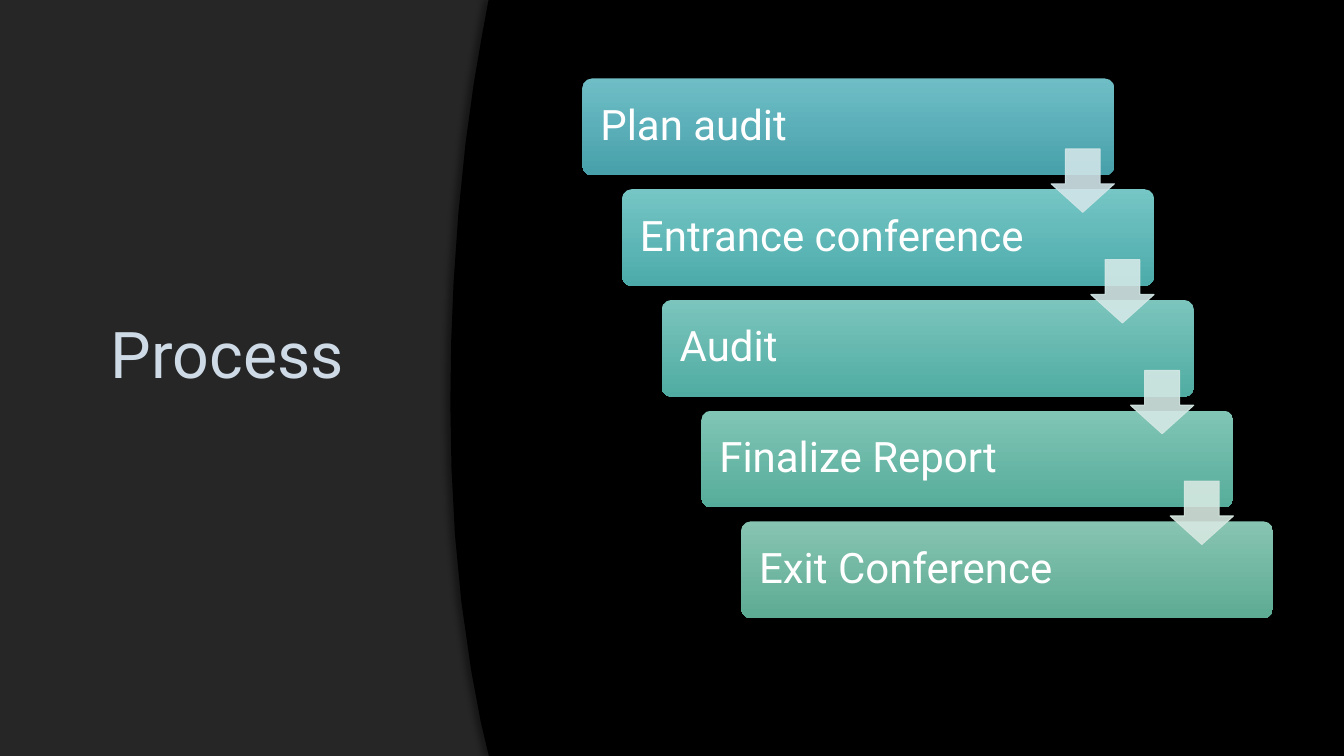
from lxml.etree import SubElement as Sub
from pptx import Presentation
from pptx.dml.color import RGBColor
from pptx.enum.shapes import MSO_SHAPE as Kind
from pptx.enum.text import MSO_ANCHOR as Anchor, PP_ALIGN as Align
from pptx.oxml.ns import qn
from pptx.util import Pt

BLACK = RGBColor(0, 0, 0)
WHITE = RGBColor(255, 255, 255)
PANEL = RGBColor(0x26, 0x26, 0x26)
EDGE = RGBColor(0x40, 0x40, 0x40)
TITLE = RGBColor(0xCE, 0xDB, 0xE6)

# Label, top colour, bottom colour of each step
STEPS = [
    ("Plan audit", RGBColor(0x6F, 0xBE, 0xC6), RGBColor(0x47, 0xA0, 0xAA)),
    ("Entrance conference", RGBColor(0x75, 0xC6, 0xC5), RGBColor(0x4C, 0xAB, 0xAA)),
    ("Audit", RGBColor(0x7B, 0xC5, 0xBD), RGBColor(0x50, 0xAC, 0xA2)),
    ("Finalize Report", RGBColor(0x81, 0xC5, 0xB6), RGBColor(0x56, 0xAC, 0x9A)),
    ("Exit Conference", RGBColor(0x87, 0xC4, 0xB1), RGBColor(0x5D, 0xAB, 0x93)),
]
ARROWS = [
    RGBColor(0xD1, 0xE5, 0xE8), RGBColor(0xD3, 0xE8, 0xE7),
    RGBColor(0xD4, 0xE8, 0xE4), RGBColor(0xD6, 0xE8, 0xE1),
]
CURVE = [
    (349, 0), (344, 27), (338.4, 60), (332.6, 102), (327.4, 153),
    (324, 202), (322.3, 244), (321.7, 288), (322.5, 334), (325, 382),
    (329.6, 430), (336.6, 479), (343.5, 516), (349.2, 540),
]


def tint(node, color, alpha):
    """Add a colour with its opacity in percent."""
    item = Sub(node, qn("a:srgbClr"), val=str(color))
    Sub(item, qn("a:alpha"), val=str(alpha * 1000))


def shade(node, alpha, blur, dist, angle):
    """Add a black outer shadow to an effect list."""
    drop = Sub(node, qn("a:outerShdw"), blurRad=str(Pt(blur)),
               dist=str(Pt(dist)), dir=str(angle * 60000), rotWithShape="0")
    tint(drop, BLACK, alpha)


def write(shape, text, font="Roboto", size=30, color=WHITE, inset=7.2):
    """Put one left-aligned, vertically centred line in a shape."""
    frame = shape.text_frame
    frame.word_wrap = True
    frame.vertical_anchor = Anchor.MIDDLE
    frame.margin_left = frame.margin_right = Pt(inset)
    line = frame.paragraphs[0]
    line.alignment = Align.LEFT
    line.line_spacing = 0.9
    run = line.add_run()
    run.text = text
    run.font.name, run.font.size = font, Pt(size)
    run.font.color.rgb = color
    return run


class Deck:
    def __init__(self, wide, high):
        self.file = Presentation()
        self.file.slide_width, self.file.slide_height = Pt(wide), Pt(high)
        self.slide = self.file.slides.add_slide(self.file.slide_layouts[5])
        self.shapes = self.slide.shapes
        back = self.slide.background.fill
        back.solid()
        back.fore_color.rgb = BLACK

    def shape(self, kind, left, top, wide, high, color=None):
        item = self.shapes.add_shape(kind, Pt(left), Pt(top), Pt(wide), Pt(high))
        item.shadow.inherit = False
        item.line.fill.background()
        if color is not None:
            item.fill.solid()
            item.fill.fore_color.rgb = color
        return item

    def title(self, text, left, top, wide, high):
        item = self.shapes.title
        self.shapes._spTree.append(item._element)  # above the panel
        item.left, item.top = Pt(left), Pt(top)
        item.width, item.height = Pt(wide), Pt(high)
        run = write(item, text, size=46, color=TITLE)
        # Faint outline and soft shadow on the letters
        props = run._r.get_or_add_rPr()
        line = props.makeelement(qn("a:ln"), {"w": str(Pt(0.75))})
        tint(Sub(line, qn("a:solidFill")), EDGE, 10)
        props.insert(0, line)
        glow = props.makeelement(qn("a:effectLst"), {})
        shade(glow, 60, 2, 1.5, 90)
        props.insert(2, glow)

    def curve(self, points, wide, high):
        form = self.shapes.build_freeform(Pt(wide), 0, scale=1.0)
        edge = [(Pt(x), Pt(y)) for x, y in points]
        form.add_line_segments(edge + [(Pt(wide), Pt(high))], close=True)
        item = form.convert_to_shape()
        item.fill.solid()
        item.fill.fore_color.rgb = BLACK
        item.line.fill.background()
        item.shadow.inherit = False
        shade(item._element.spPr.find(qn("a:effectLst")), 40, 4, 3, 180)

    def step(self, text, left, top, light, dark):
        item = self.shape(Kind.ROUNDED_RECTANGLE, left, top, 380, 69.2)
        item.adjustments[0] = 0.1
        item.fill.gradient()
        item.fill.gradient_angle = 270
        for stop, color in zip(item.fill.gradient_stops, (light, dark)):
            stop.color.rgb = color
        shade(item._element.spPr.find(qn("a:effectLst")), 60, 5, 2, 90)
        write(item, text, inset=10.8)

    def arrow(self, left, top, color):
        item = self.shape(Kind.DOWN_ARROW, left, top, 45.2, 45.2, color)
        item.adjustments[0], item.adjustments[1] = 0.45, 0.55
        item.adjustments[0], item.adjustments[1] = 0.55, 0.45
        item.line.color.rgb = color
        item.line.width = Pt(0.75)
        for part in item._element.spPr.iter(qn("a:srgbClr")):
            Sub(part, qn("a:alpha"), val="90000")


def main():
    deck = Deck(960, 540)

    # Panel, title and curved field
    deck.shape(Kind.RECTANGLE, 0, 0, 960, 540, PANEL)
    deck.title("Process", 72, 48, 220, 415.6)
    deck.curve(CURVE, 960, 540)

    # Staircase of steps, then the arrows over it
    over, down = 28.35, 79.1
    for i, (text, light, dark) in enumerate(STEPS):
        deck.step(text, 416 + i * over, 56 + i * down, light, dark)
    for i, color in enumerate(ARROWS):
        deck.arrow(750.8 + i * over, 106.4 + i * down, color)

    deck.file.save("out.pptx")


if __name__ == "__main__":
    main()
